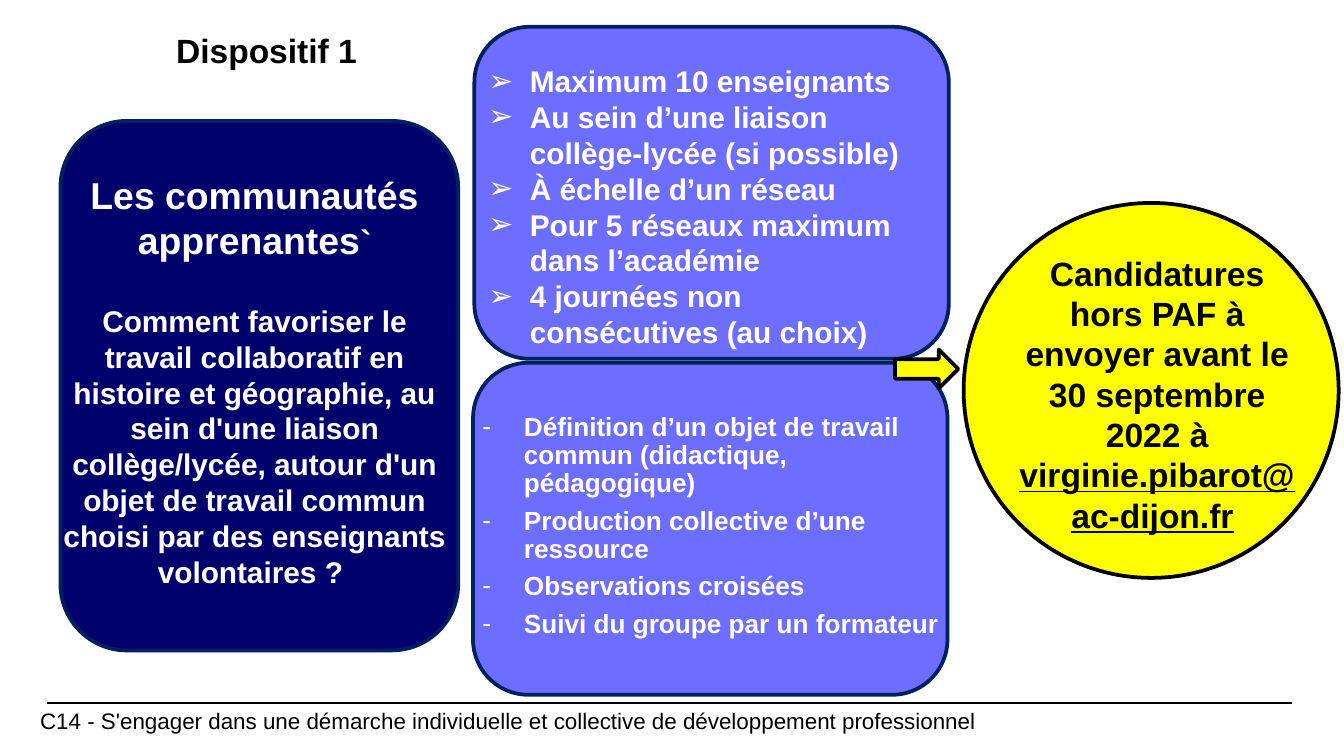
from lxml.etree import SubElement
from pptx import Presentation
from pptx.dml.color import RGBColor
from pptx.enum.shapes import MSO_CONNECTOR as Connector, MSO_SHAPE as Shape
from pptx.enum.text import MSO_ANCHOR as Anchor, PP_ALIGN as Align
from pptx.oxml.ns import qn
from pptx.util import Inches, Pt

COLUMNS, ROWS = 100, 56.25  # square grid cells
CELL = Inches(0.1)

NAVY, EDGE, VIOLET = "00006D", "002060", "6D6DFF"
YELLOW, BLACK, WHITE = "FFFF00", "000000", "FFFFFF"


def color(value):
    return RGBColor.from_string(value)


def cells(*values):
    return [round(value * CELL) for value in values]


class SlideBuilder:
    font_name = "Arial"

    def __init__(self, presentation):
        self.slide = presentation.slides.add_slide(presentation.slide_layouts[5])

    def style(self, paragraph, size, ink, bold=True, align=Align.LEFT):
        paragraph.alignment = align
        font = paragraph.font
        font.name, font.size, font.bold = self.font_name, Pt(size), bold
        font.color.rgb = color(ink)

    def title(self, text, area):
        shape = self.slide.shapes.title
        shape.left, shape.top, shape.width, shape.height = cells(*area)
        shape.text_frame.text = text
        shape.text_frame.vertical_anchor = Anchor.TOP
        self.style(shape.text_frame.paragraphs[0], 18, BLACK)

    def block(self, kind, area, fill, edge):
        shape = self.slide.shapes.add_shape(kind, *cells(*area))
        shape.shadow.inherit = False
        shape.fill.solid()
        shape.fill.fore_color.rgb = color(fill)
        shape.line.color.rgb = color(edge)
        shape.line.width = Pt(2)

    def rule(self, start, end, row):
        line = self.slide.shapes.add_connector(
            Connector.STRAIGHT, *cells(start, row, end, row))
        line.line.color.rgb = color(BLACK)
        line.line.width = Pt(0.8)
        SubElement(line._element.spPr, qn("a:effectLst"))

    def text(self, area, paragraphs, ink, bold=True, align=Align.LEFT):
        """Each paragraph is a (text, size) pair; returns the paragraphs."""
        frame = self.slide.shapes.add_textbox(*cells(*area)).text_frame
        frame.word_wrap = True
        for index, (words, size) in enumerate(paragraphs):
            paragraph = frame.add_paragraph() if index else frame.paragraphs[0]
            paragraph.add_run().text = words
            self.style(paragraph, size, ink, bold, align)
        return frame.paragraphs

    def bullets(self, area, items, size, mark, spacing=1.0, after=0):
        frame = self.slide.shapes.add_textbox(*cells(*area)).text_frame
        frame.word_wrap = True
        indent = cells(3.1)[0]
        for index, item in enumerate(items):
            paragraph = frame.add_paragraph() if index else frame.paragraphs[0]
            paragraph.text = item
            paragraph.line_spacing = spacing
            paragraph.space_after = Pt(after)
            properties = paragraph._p.get_or_add_pPr()
            properties.set("marL", str(indent))
            properties.set("indent", str(-indent))
            SubElement(properties, qn("a:buFont"), typeface=self.font_name)
            SubElement(properties, qn("a:buChar"), char=mark)
            self.style(paragraph, size, WHITE)


def main():
    presentation = Presentation()
    presentation.slide_width, presentation.slide_height = cells(COLUMNS, ROWS)
    builder = SlideBuilder(presentation)
    builder.title("Dispositif 1", (12.1, 1.7, 35.8, 4))

    # Coloured blocks
    builder.block(Shape.OVAL, (71.7, 15.1, 27.9, 27.9), YELLOW, BLACK)
    builder.block(Shape.ROUNDED_RECTANGLE, (4.5, 9, 29.6, 39.4), NAVY, EDGE)
    for left, top in ((35.3, 2), (35.2, 27)):
        builder.block(Shape.ROUNDED_RECTANGLE, (left, top, 35.3, 24.7), VIOLET, EDGE)
    builder.block(Shape.RIGHT_ARROW, (66.6, 26, 4.7, 2.9), YELLOW, BLACK)

    # Theme and its question
    theme, question = builder.text((3.6, 12.3, 30.7, 32.3), [
        ("Les communautés apprenantes", 20),
        ("Comment favoriser le travail collaboratif en histoire et géographie, "
         "au sein d'une liaison collège/lycée, autour d'un objet de travail "
         "commun choisi par des enseignants volontaires ? ", 16),
    ], WHITE, align=Align.CENTER)
    accent = theme.add_run()
    accent.text = "`"
    accent.font.size = Pt(18)
    question.space_before = Pt(22)

    # Conditions and contents
    builder.bullets((35.35, 4.2, 34, 22.6), [
        "Maximum 10 enseignants",
        "Au sein d’une liaison collège-lycée (si possible)",
        "À échelle d’un réseau",
        "Pour 5 réseaux maximum dans l’académie",
        "4 journées non consécutives (au choix)",
    ], 16, "➢")
    builder.bullets((34.9, 30.3, 37.4, 18.3), [
        "Définition d’un objet de travail commun (didactique, pédagogique)",
        "Production collective d’une ressource",
        "Observations croisées",
        "Suivi du groupe par un formateur",
    ], 14, "-", spacing=0.9, after=4.9)

    # Applications
    (application,) = builder.text((74.7, 18.3, 22.8, 25.2), [
        ("Candidatures hors PAF à envoyer avant le 30 septembre 2022 à ", 18),
    ], BLACK, align=Align.CENTER)
    address = application.add_run()
    address.text = "virginie.pibarot@ac-dijon.fr"
    address.font.underline = True
    application.add_run().text = " "

    # Footer
    builder.rule(3.5, 96.1, 52.3)
    builder.text((2, 52.1, 96, 3), [
        ("C14 - S'engager dans une démarche individuelle et collective "
         "de développement professionnel", 12),
    ], BLACK, bold=False)

    presentation.save("out.pptx")


if __name__ == "__main__":
    main()
